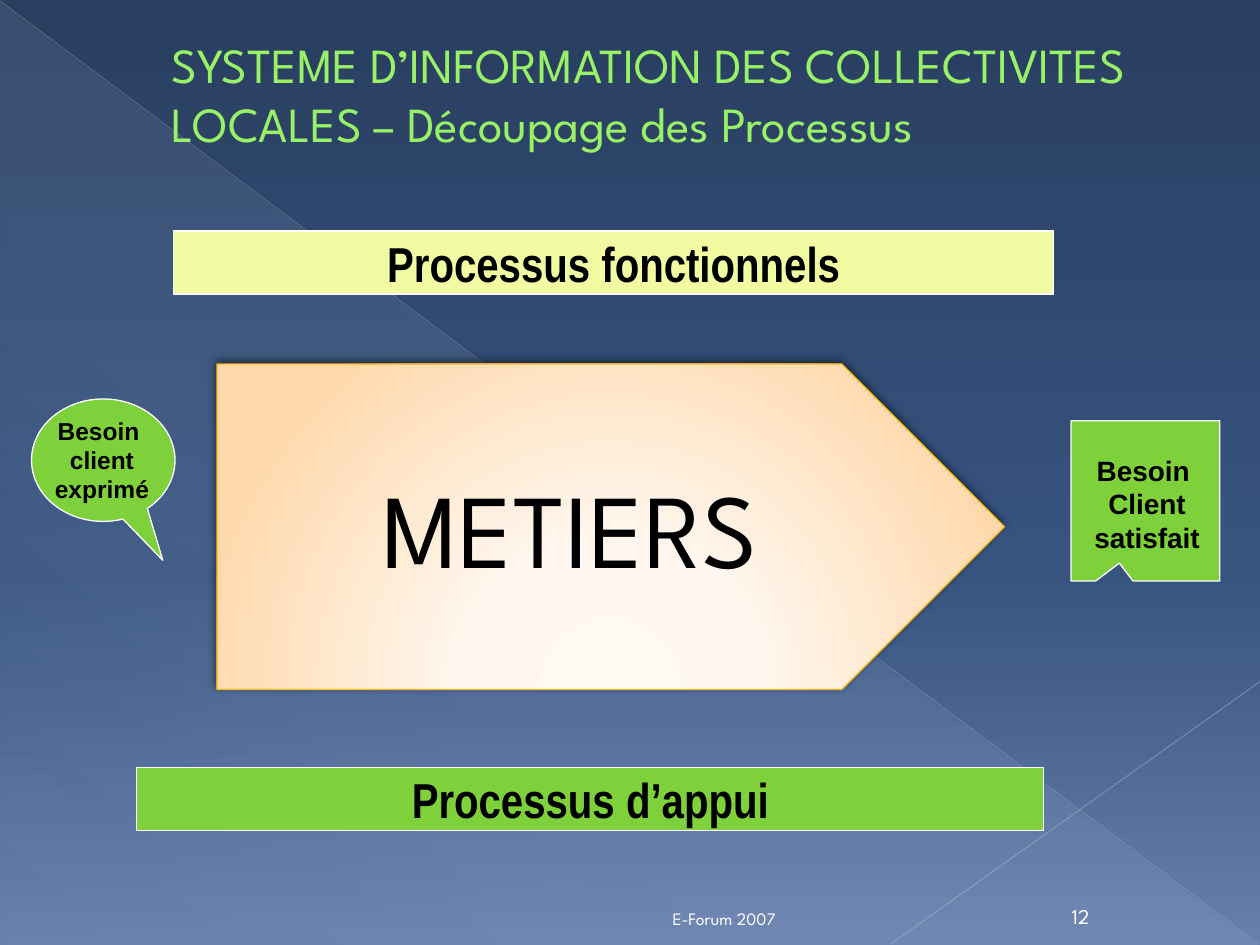
import pptx
import pptx.util
import pptx.dml.color
import pptx.oxml
import pptx.oxml.ns
import pptx.enum.shapes
import pptx.enum.text

Pt = pptx.util.Pt
SHAPE = pptx.enum.shapes.MSO_SHAPE
ALIGN = pptx.enum.text.PP_ALIGN
ANCHOR = pptx.enum.text.MSO_ANCHOR
NS = 'xmlns:a="http://schemas.openxmlformats.org/drawingml/2006/main"'
qn = pptx.oxml.ns.qn
HEADING_FONT = "League Spartan"
GREEN = "7FD13B"


def color(hex_code):
    return pptx.dml.color.RGBColor.from_string(hex_code)


def points(*lengths):
    return [Pt(length) for length in lengths]


def set_gradient(fill, owner, stops, direction):
    fill.gradient()
    gradient = owner.find(".//" + qn("a:gradFill"))
    for child in list(gradient):
        gradient.remove(child)
    stop_xml = "".join(
        f'<a:gs pos="{position * 1000}"><a:srgbClr val="{hex_code}">'
        f'<a:alpha val="{alpha * 1000}"/></a:srgbClr></a:gs>'
        for position, hex_code, alpha in stops
    )
    gradient.append(pptx.oxml.parse_xml(f"<a:gsLst {NS}>{stop_xml}</a:gsLst>"))
    gradient.append(pptx.oxml.parse_xml(direction))


def linear(angle):
    return f'<a:lin {NS} ang="{angle * 60000}" scaled="0"/>'


def write(shape, text, size, font, hex_code, bold=False, align=ALIGN.CENTER,
          anchor=ANCHOR.MIDDLE, wrap=True):
    frame = shape.text_frame
    frame.text = text
    frame.word_wrap = wrap
    frame.vertical_anchor = anchor
    for paragraph in frame.paragraphs:
        paragraph.alignment = align
        for run in paragraph.runs:
            run.font.size = Pt(size)
            run.font.name = font
            run.font.bold = bold
            run.font.color.rgb = color(hex_code)


def add_text(slide, box, text, *style, **options):
    label = slide.shapes.add_textbox(*points(*box))
    write(label, text, *style, **options)
    return label


def add_outlined(slide, preset, box, fill, line="FFFFFF"):
    shape = slide.shapes.add_shape(preset, *points(*box))
    shape.shadow.inherit = False
    if fill:
        shape.fill.solid()
        shape.fill.fore_color.rgb = color(fill)
    shape.line.color.rgb = color(line)
    shape.line.width = Pt(0.75)
    return shape


def add_hairline(slide, start, end, hex_code, width, alpha):
    hairline = slide.shapes.add_connector(
        pptx.enum.shapes.MSO_CONNECTOR.STRAIGHT, *points(*start, *end))
    hairline.line.color.rgb = color(hex_code)
    hairline.line.width = Pt(width)
    properties = hairline._element.spPr
    properties.find(".//" + qn("a:srgbClr")).append(
        pptx.oxml.parse_xml(f'<a:alpha {NS} val="{alpha * 1000}"/>'))
    properties.append(pptx.oxml.parse_xml(f"<a:effectLst {NS}/>"))


def add_backdrop(slide, box):
    left, top, width, height = box
    right, bottom = left + width, top + height
    background = slide.background
    set_gradient(background.fill, slide._element,
                 [(0, "293F60", 100), (60, "375380", 100), (100, "667FAC", 100)],
                 linear(90))
    glow = slide.shapes.add_shape(
        SHAPE.RIGHT_TRIANGLE, *points(left + 0.5, top + 1, width - 1, height - 1))
    glow.shadow.inherit = False
    glow.line.fill.background()
    set_gradient(glow.fill, glow._element.spPr,
                 [(0, "D6ECFF", 10), (70, "D6ECFF", 8), (100, "D6ECFF", 1)],
                 linear(133))
    add_hairline(slide, (left, top + 0.5), (right - 0.5, bottom - 0.5),
                 "B7BCC5", 0.39, 35)
    add_hairline(slide, (right, top + 389.5), (left + 509, bottom - 0.5),
                 "BFC3CB", 0.47, 45)


def add_title(slide, box, text):
    title = add_text(slide, box, text, 28, HEADING_FONT, "98F167", align=ALIGN.LEFT)
    title.text_frame.margin_left = Pt(45.5)


def add_process_bar(slide, box, text, fill):
    bar = add_outlined(slide, SHAPE.RECTANGLE, box, fill)
    write(bar, text, 28, "Arial Narrow", "000000", bold=True)
    frame = bar.text_frame
    frame.margin_left = frame.margin_right = Pt(1.5)
    frame.margin_top = frame.margin_bottom = Pt(0.75)


def add_need(slide, box, preset, tip, text, size, text_box):
    left, top, _, _ = box
    bubble = add_outlined(slide, preset, box, GREEN)
    for index, offset in enumerate(tip):
        bubble.adjustments[index] = offset
    dx, dy, width, height = text_box
    add_text(slide, (left + dx, top + dy, width, height), text, size, "Arial",
             "000000", bold=True, anchor=ANCHOR.TOP, wrap=False)


def add_core_process(slide, box, text):
    arrow = add_outlined(slide, SHAPE.PENTAGON, box, None, "FFB809")
    set_gradient(
        arrow.fill, arrow._element.spPr,
        [(0, "FFF9F3", 100), (34, "FFF7EF", 100), (100, "FFD8AB", 100)],
        f'<a:path {NS} path="circle">'
        '<a:fillToRect l="50000" t="155000" r="50000" b="-55000"/></a:path>')
    effects = arrow._element.spPr.find(qn("a:effectLst"))
    effects.append(pptx.oxml.parse_xml(
        f'<a:outerShdw {NS} blurRad="{Pt(5)}" dist="{Pt(2)}" dir="{245 * 60000}" '
        'algn="tl" rotWithShape="0"><a:srgbClr val="000000">'
        '<a:alpha val="50000"/></a:srgbClr></a:outerShdw>'))
    write(arrow, text, 60, HEADING_FONT, "000000")


def add_footer(slide, box, event, number):
    left, top, width, height = box
    number_width = 39.5
    add_text(slide, (left, top, 168, height), event, 10, HEADING_FONT, "FFFFFF",
             align=ALIGN.LEFT, anchor=ANCHOR.BOTTOM)
    add_text(slide, (left + width - number_width, top, number_width, height),
             number, 12, HEADING_FONT, "FFFFFF", anchor=ANCHOR.BOTTOM)


def main():
    deck = pptx.Presentation()
    deck.slide_width, deck.slide_height = points(720, 540)
    slide = deck.slides.add_slide(deck.slide_layouts[6])
    add_backdrop(slide, (0, 0, 720, 540))
    add_title(slide, (52.5, 11.5, 662, 84),
              "SYSTEME D’INFORMATION DES COLLECTIVITES LOCALES – Découpage des Processus")
    add_process_bar(slide, (99.25, 132, 502.75, 36), "Processus fonctionnels", "F1FCA2")
    add_process_bar(slide, (78, 438.5, 518.5, 36), "Processus d’appui", GREEN)
    add_need(slide, (18, 228, 82, 70), SHAPE.OVAL_CALLOUT, (0.415, 0.817),
             "Besoin \nclient\nexprimé", 14, (6, 6, 68.5, 58))
    add_need(slide, (612, 240.5, 85, 91.5), SHAPE.RECTANGULAR_CALLOUT, (-0.175, 0.389),
             "Besoin \nClient\nsatisfait", 16, (6, 15, 75, 65))
    add_footer(slide, (377.25, 510.5, 260, 24), "E-Forum 2007", "12")
    add_core_process(slide, (124, 208, 450, 186), "METIERS")
    deck.save("out.pptx")


if __name__ == "__main__":
    main()
